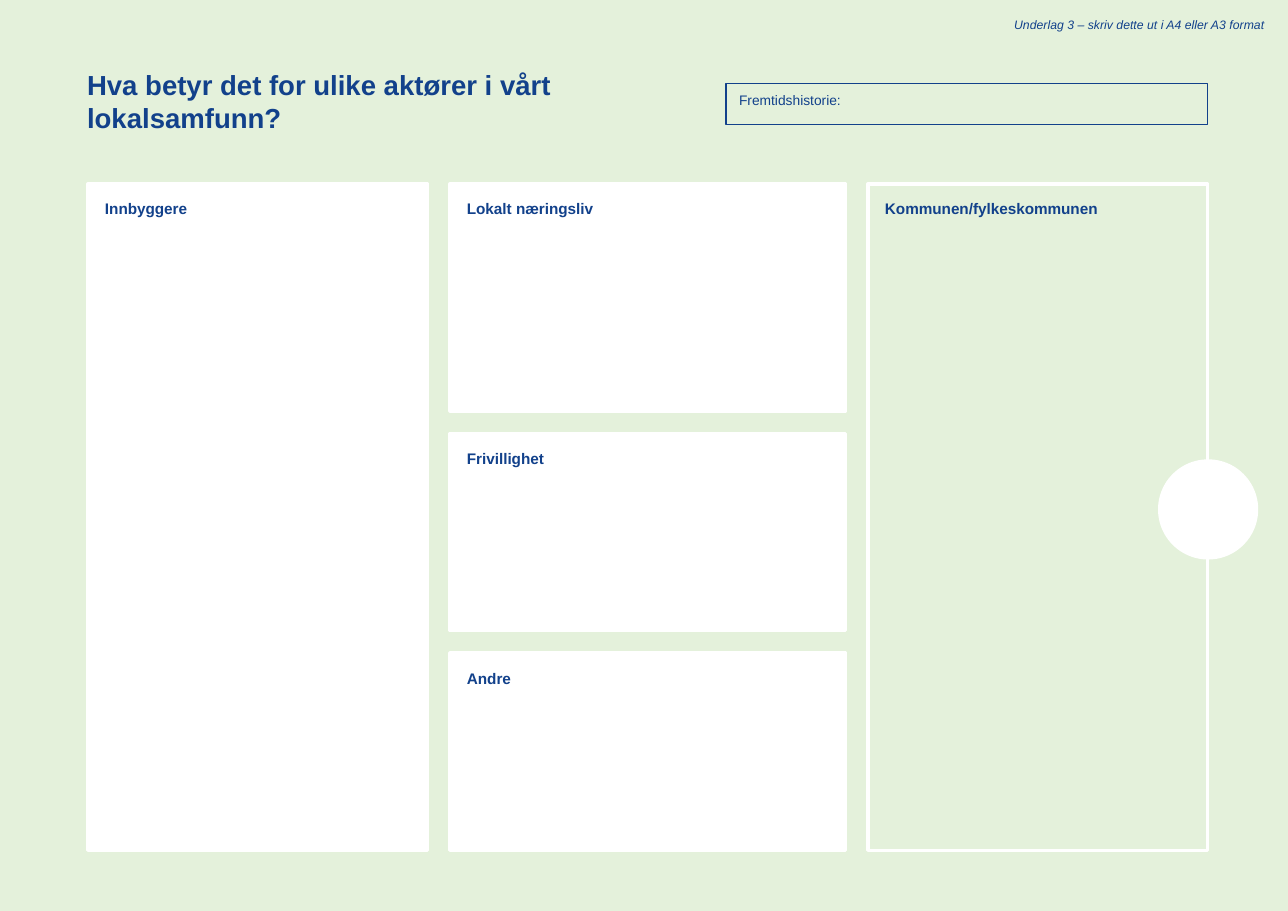
from pptx import Presentation
from pptx.dml.color import RGBColor
from pptx.enum.shapes import MSO_SHAPE
from pptx.enum.text import MSO_AUTO_SIZE, PP_ALIGN
from pptx.util import Inches, Pt

COLORS = {"paper": "E4F1DB", "ink": "12418B", "white": "FFFFFF"}
COLUMNS = (26.35, 30.71, 26.35)
ROWS = (24.91, 21.64, 21.64)
LEFT, TOP = 6.84, 20.19
COLUMN_GAP, ROW_GAP = 1.75, 2.48
PANELS = [
    ("Innbyggere", 0, 0, 3, "white", 15.48),
    ("Lokalt næringsliv", 1, 0, 1, "white", 17.79),
    ("Frivillighet", 1, 1, 1, "white", 12.75),
    ("Andre", 1, 2, 1, "white", 9.75),
    ("Kommunen/fylkeskommunen", 2, 0, 3, None, 19.67),
]


class Worksheet:
    """Draws styled elements on one page, placed in percent of its size."""

    def __init__(self, deck):
        self.deck = deck
        self.font = "Arial"
        self.page = deck.slides.add_slide(deck.slide_layouts[6])
        fill = self.page.background.fill
        fill.solid()
        fill.fore_color.rgb = self.color("paper")

    def color(self, name):
        return RGBColor.from_string(COLORS[name])

    def place(self, left, top, width, height):
        across, down = self.deck.slide_width / 100, self.deck.slide_height / 100
        return [round(n) for n in (left * across, top * down, width * across, height * down)]

    def shape(self, area, fill=None, line=None, weight=2.25, kind=MSO_SHAPE.RECTANGLE):
        shape = self.page.shapes.add_shape(kind, *self.place(*area))
        shape.shadow.inherit = False
        if fill:
            shape.fill.solid()
            shape.fill.fore_color.rgb = self.color(fill)
        else:
            shape.fill.background()
        if line:
            shape.line.color.rgb = self.color(line)
            shape.line.width = Pt(weight)
        else:
            shape.line.fill.background()

    def text(self, words, area, size, inset=0.1, bold=False, italic=False, align=PP_ALIGN.LEFT):
        frame = self.page.shapes.add_textbox(*self.place(*area)).text_frame
        frame.text = words
        frame.word_wrap = True
        frame.auto_size = MSO_AUTO_SIZE.SHAPE_TO_FIT_TEXT
        frame.margin_left = frame.margin_right = Inches(inset)
        frame.margin_top = frame.margin_bottom = Inches(inset)
        para = frame.paragraphs[0]
        para.alignment = align
        font = para.runs[0].font
        font.name, font.size = self.font, Pt(size)
        font.bold, font.italic = bold, italic
        font.color.rgb = self.color("ink")

    def panel(self, heading, column, row, span, fill, heading_width):
        left = LEFT + sum(COLUMNS[:column]) + column * COLUMN_GAP
        top = TOP + sum(ROWS[:row]) + row * ROW_GAP
        height = sum(ROWS[row:row + span]) + (span - 1) * ROW_GAP
        self.shape((left, top, COLUMNS[column], height), fill, "white")
        self.text(heading, (left + 0.47, top + 0.7, heading_width, 4.47), 10, bold=True)


def main():
    deck = Presentation()
    deck.slide_width, deck.slide_height = Inches(11.69), Inches(8.27)
    sheet = Worksheet(deck)
    for panel in PANELS:
        sheet.panel(*panel)
    sheet.shape((56.37, 9.19, 37.38, 4.47), line="ink", weight=0.75)
    sheet.text("Hva betyr det for ulike aktører i vårt lokalsamfunn?",
               (5.82, 6.17, 44.91, 10.04), 18, inset=0.11, bold=True)
    sheet.text("Fremtidshistorie:", (56.54, 9.19, 10.86, 4.23), 9)
    sheet.text("Underlag 3 – skriv dette ut i A4 eller A3 format",
               (74.76, 1.09, 24.38, 4.35), 8, inset=0.11, italic=True, align=PP_ALIGN.RIGHT)
    sheet.shape((89.91, 50.42, 7.78, 11), "white", kind=MSO_SHAPE.OVAL)
    deck.save("out.pptx")


if __name__ == "__main__":
    main()
